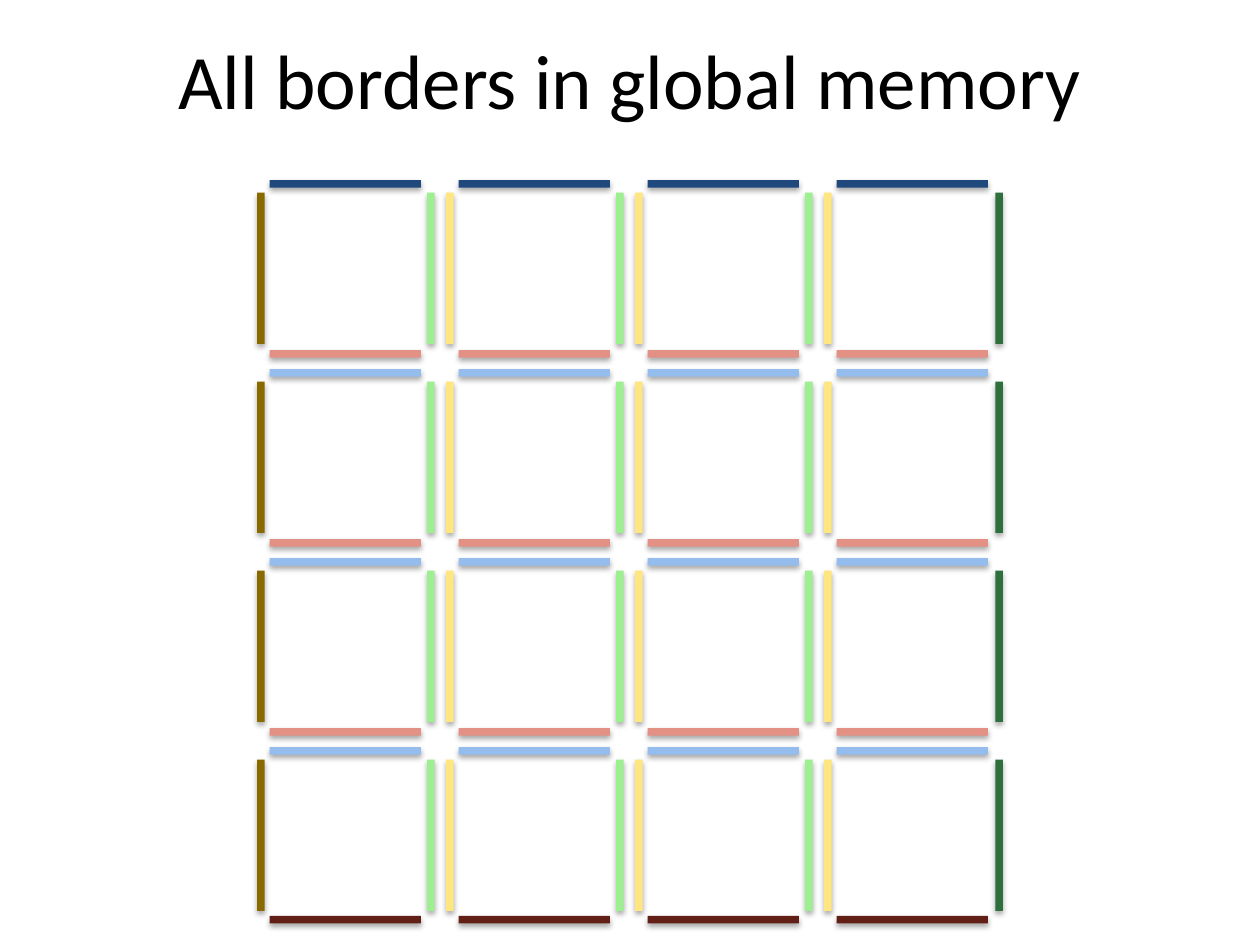
from lxml import etree
from pptx import Presentation
from pptx.dml.color import RGBColor
from pptx.enum.shapes import MSO_SHAPE
from pptx.enum.text import MSO_ANCHOR, PP_ALIGN
from pptx.oxml import parse_xml
from pptx.oxml.ns import nsdecls, qn
from pptx.util import Inches, Pt

# Content
TITLE = "All borders in global memory"
PITCH, LENGTH, THICK = 1.5, 1.2, 0.06
# Border sets: colour, direction, first left, first top, columns, rows
BORDERS = [
    ("9EEF91", "vertical", 3.39, 1.53, 3, 4),    # inner right
    ("FFE680", "vertical", 3.54, 1.53, 3, 4),    # inner left
    ("E39085", "horizontal", 2.14, 2.78, 4, 3),  # inner bottom
    ("94BCEC", "horizontal", 2.14, 2.93, 4, 3),  # inner top
    ("1F497D", "horizontal", 2.14, 1.43, 4, 1),  # outer top
    ("896A00", "vertical", 2.04, 1.53, 1, 4),    # outer left
    ("2E6F3E", "vertical", 7.9, 1.53, 1, 4),     # outer right
    ("621F16", "horizontal", 2.14, 7.27, 4, 1),  # outer bottom
]
SHADOW = (
    f'<a:effectLst {nsdecls("a")}>'
    '<a:outerShdw blurRad="40000" dist="23000" dir="5400000" rotWithShape="0">'
    '<a:srgbClr val="000000"><a:alpha val="35000"/></a:srgbClr>'
    '</a:outerShdw></a:effectLst>'
)


def color(value):
    return RGBColor.from_string(value)


def add_text(s, text, left, top, width, height, size=18, font="Calibri",
             fill="000000", align=PP_ALIGN.CENTER, anchor=MSO_ANCHOR.MIDDLE):
    sp = s.shapes.add_textbox(Inches(left), Inches(top), Inches(width), Inches(height))
    tf = sp.text_frame
    tf.word_wrap = True
    tf.vertical_anchor = anchor
    p = tf.paragraphs[0]
    p.alignment = align
    r = p.add_run()
    r.text = text
    r.font.name, r.font.size = font, Pt(size)
    r.font.color.rgb = color(fill)


def add_bar(shapes, left, top, width, height, fill):
    sp = shapes.add_shape(MSO_SHAPE.RECTANGLE, Inches(left), Inches(top),
                          Inches(width), Inches(height))
    sp.fill.solid()
    sp.fill.fore_color.rgb = color(fill)
    sp.line.fill.background()
    # Soft shadow straight below
    sp.shadow.inherit = False
    spPr = sp.fill._xPr
    spPr.replace(spPr.find(qn("a:effectLst")), parse_xml(SHADOW))


prs = Presentation()
prs.slide_width, prs.slide_height = Inches(10), Inches(7.5)
s = prs.slides.add_slide(prs.slide_layouts[6])

# Title
add_text(s, TITLE, 0, 0, 10, 1.25, size=44)

# One group for each set of borders
for fill, direction, left, top, cols, rows in BORDERS:
    group = s.shapes.add_group_shape()
    size = (THICK, LENGTH) if direction == "vertical" else (LENGTH, THICK)
    for row in range(rows):
        for col in range(cols):
            add_bar(group.shapes, left + col * PITCH, top + row * PITCH, *size, fill)

prs.save("out.pptx")
